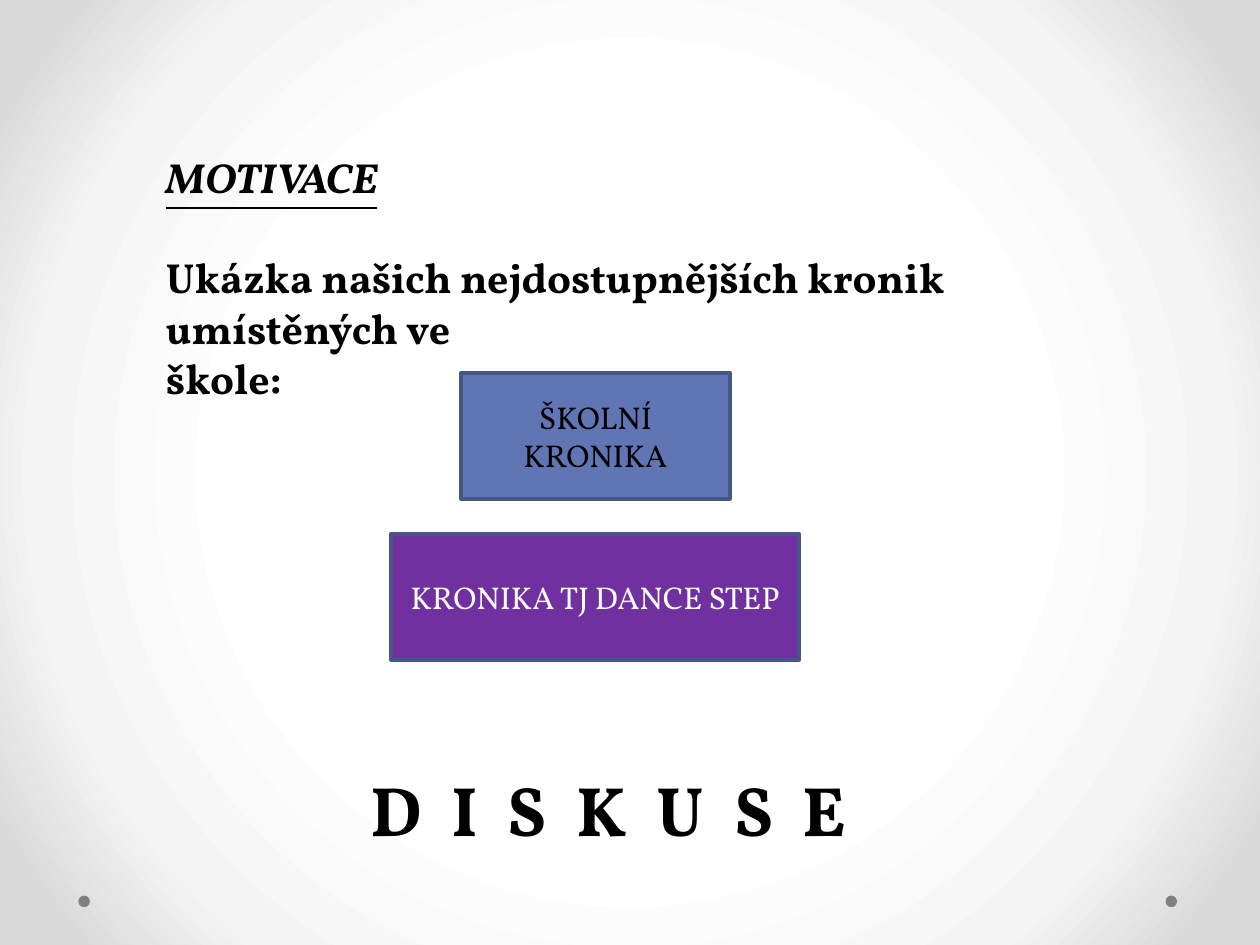
from lxml import etree
from pptx import Presentation
from pptx import util as u
from pptx.dml.color import RGBColor
from pptx.enum import shapes, text
from pptx.oxml import parse_xml
from pptx.oxml.ns import nsdecls, qn

FONT = "Vollkorn"


def color(value):
    return RGBColor.from_string(value)


def write(p, content, size, fill="000000", bold=False, italic=False,
          underline=False, align=text.PP_ALIGN.LEFT, before=0, spacing=0):
    p.alignment = align
    p.space_before = u.Pt(before)
    r = p.add_run()
    r.text = content
    f = r.font
    f.name, f.size = FONT, u.Pt(size)
    f.bold, f.italic, f.underline = bold, italic, underline
    f.color.rgb = color(fill)
    if spacing:
        f._element.set("spc", str(round(spacing * 100)))


def add_shape(s, kind, box, fill):
    sp = s.shapes.add_shape(kind, *map(u.Pt, box))
    sp.shadow.inherit = False
    sp.fill.solid()
    sp.fill.fore_color.rgb = color(fill)
    return sp


def add_text_frame(s, box):
    tf = s.shapes.add_textbox(*map(u.Pt, box)).text_frame
    tf.word_wrap = True
    return tf


def background(s, stops):
    """Circular gradient from the slide centre; stops are (percent, colour)."""
    s.background.fill.gradient()
    grad = s.element.find(".//" + qn("a:gradFill"))
    for child in list(grad):
        grad.remove(child)
    gs_list = etree.SubElement(grad, qn("a:gsLst"))
    for percent, value in stops:
        gs = etree.SubElement(gs_list, qn("a:gs"), pos=str(percent * 1000))
        etree.SubElement(gs, qn("a:srgbClr"), val=value)
    grad.append(parse_xml(
        f'<a:path {nsdecls("a")} path="circle">'
        '<a:fillToRect l="50000" t="50000" r="50000" b="50000"/></a:path>'))


def corner_dots(s, lefts, top, size):
    for left in lefts:
        dot = add_shape(s, shapes.MSO_SHAPE.OVAL, (left, top, size, size), "808080")
        dot.line.fill.background()


def motivation(s, box):
    tf = add_text_frame(s, box)
    write(tf.paragraphs[0], "MOTIVACE", 24, bold=True, italic=True, underline=True)
    write(tf.add_paragraph(), "Ukázka našich nejdostupnějších kronik umístěných ve",
          24, bold=True, before=28.8)
    write(tf.add_paragraph(), "škole:", 24, bold=True)


def chronicle(s, box, label, fill, font_color):
    sp = add_shape(s, shapes.MSO_SHAPE.RECTANGLE, box, fill)
    sp.line.color.rgb = color("475785")
    sp.line.width = u.Pt(2.25)
    tf = sp.text_frame
    tf.word_wrap = True
    tf.vertical_anchor = text.MSO_ANCHOR.MIDDLE
    write(tf.paragraphs[0], label, 18, fill=font_color, align=text.PP_ALIGN.CENTER)


def discussion(s, box):
    tf = add_text_frame(s, box)
    write(tf.paragraphs[0], "D I S K U S E", 40, bold=True, spacing=4.5)


def main():
    prs = Presentation()
    prs.slide_width, prs.slide_height = u.Pt(720), u.Pt(540)
    s = prs.slides.add_slide(prs.slide_layouts[6])
    background(s, [(50, "FFFFFF"), (76, "F4F4F4"), (92, "DADADA")])
    corner_dots(s, (666, 44.8), 511.8, 6.6)
    motivation(s, (87.8, 82.8, 556.6, 152.6))
    chronicle(s, (263.5, 213, 153.5, 72), "ŠKOLNÍ KRONIKA", "6076B4", "000000")
    chronicle(s, (223.6, 305, 233, 72), "KRONIKA TJ DANCE STEP", "7030A0", "FFFFFF")
    discussion(s, (204.5, 434.2, 300, 55.4))
    prs.save("out.pptx")


if __name__ == "__main__":
    main()
